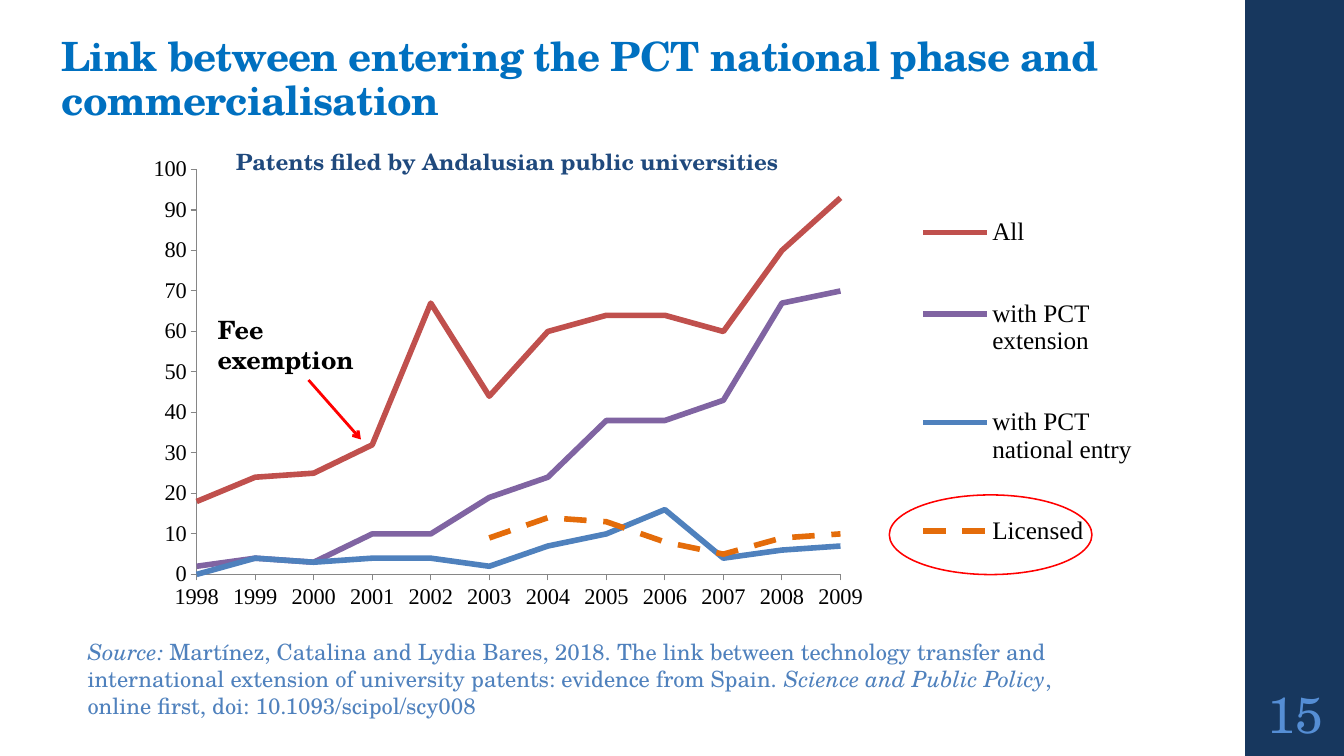
from lxml import etree
from pptx import Presentation
from pptx.chart.data import CategoryChartData
from pptx.dml.color import RGBColor
from pptx.enum.chart import XL_CHART_TYPE, XL_LEGEND_POSITION, XL_TICK_MARK
from pptx.enum.dml import MSO_LINE
from pptx.enum.shapes import MSO_CONNECTOR, MSO_SHAPE
from pptx.enum.text import MSO_ANCHOR, PP_ALIGN
from pptx.oxml.ns import qn
from pptx.util import Inches, Pt

LINE_CHART = XL_CHART_TYPE.LINE
RIGHT = XL_LEGEND_POSITION.RIGHT
OUTSIDE, NO_TICK = XL_TICK_MARK.OUTSIDE, XL_TICK_MARK.NONE
DASH = MSO_LINE.DASH
LEFT, CENTER = PP_ALIGN.LEFT, PP_ALIGN.CENTER
MIDDLE, TOP, BOTTOM = MSO_ANCHOR.MIDDLE, MSO_ANCHOR.TOP, MSO_ANCHOR.BOTTOM

SERIF, CHART_FONT = "TeX Gyre Schola", "Times New Roman"

TITLE = "Link between entering the PCT national phase and commercialisation"
CHART_HEADING = "Patents filed by Andalusian public universities"
CALLOUT = "Fee exemption"
PAGE_NUMBER = "15"
SOURCE = [  # text, italic
    ("Source: ", True),
    ("Martínez, Catalina and Lydia Bares, 2018. The link between technology transfer and "
     "international extension of university patents: evidence from Spain. ", False),
    ("Science and Public Policy", True),
    (", online first, doi: 10.1093/scipol/scy008", False),
]
YEARS = [str(year) for year in range(1998, 2010)]
PATENTS = [  # name, colour, dash, values
    ("All", "C0504D", None, [18, 24, 25, 32, 67, 44, 60, 64, 64, 60, 80, 93]),
    ("with PCT extension", "8064A2", None, [2, 4, 3, 10, 10, 19, 24, 38, 38, 43, 67, 70]),
    ("with PCT national entry", "4F81BD", None, [0, 4, 3, 4, 4, 2, 7, 10, 16, 4, 6, 7]),
    ("Licensed", "E46C0A", DASH, [None] * 5 + [9, 14, 13, 8, 5, 9, 10]),
]
PLOT_AREA = (0.07, 0.05, 0.62, 0.83)
LEGEND_AREA = (0.75, 0.04, 0.24, 0.89)


def color(hex_value):
    return RGBColor.from_string(hex_value)


def style(font, size, hex_value, name=SERIF, bold=False):
    font.name, font.size, font.bold = name, Pt(size), bold
    font.color.rgb = color(hex_value)


def add_text(box, runs, size, hex_value, bold=False, align=LEFT, anchor=TOP):
    """Add a wrapped one-paragraph text box; runs are (text, italic) pairs."""
    frame = slide.shapes.add_textbox(*map(Inches, box)).text_frame
    frame.word_wrap = True
    frame.vertical_anchor = anchor
    paragraph = frame.paragraphs[0]
    paragraph.alignment = align
    style(paragraph.font, size, hex_value, bold=bold)
    for text, italic in runs:
        run = paragraph.add_run()
        run.text = text
        if italic:
            run.font.italic = True
    return frame


def manual_layout(area, inner=False):
    """Build a c:layout element from chart fractions (x, y, w, h)."""
    layout = etree.Element(qn("c:layout"))
    manual = etree.SubElement(layout, qn("c:manualLayout"))
    settings = [("layoutTarget", "inner")] if inner else []
    settings += [("xMode", "edge"), ("yMode", "edge")]
    settings += zip("xywh", map(str, area))
    for tag, value in settings:
        etree.SubElement(manual, qn("c:" + tag)).set("val", value)
    return layout


def add_patent_chart():
    data = CategoryChartData()
    data.categories = YEARS
    for name, _, _, values in PATENTS:
        data.add_series(name, values)
    box = map(Inches, (1.23, 1.44, 10.3, 4.84))
    chart = slide.shapes.add_chart(LINE_CHART, *box, data).chart
    style(chart.font, 10, "000000")
    chart.has_title = False

    plot = chart.plots[0]
    plot.vary_by_categories = False
    for series, (_, hex_value, dash, _) in zip(plot.series, PATENTS):
        series.smooth = False
        series.format.line.width = Pt(4)
        series.format.line.color.rgb = color(hex_value)
        if dash:
            series.format.line.dash_style = dash

    values_axis = chart.value_axis
    values_axis.minimum_scale, values_axis.maximum_scale = 0, 100
    values_axis.major_unit = 10
    for axis in (chart.category_axis, values_axis):
        axis.has_major_gridlines = False
        axis.major_tick_mark, axis.minor_tick_mark = OUTSIDE, NO_TICK
        axis.format.line.color.rgb = color("868686")
        axis.format.line.width = Pt(0.75)
        style(axis.tick_labels.font, 16, "000000", CHART_FONT)

    chart.has_legend = True
    legend = chart.legend
    legend.position = RIGHT
    legend.include_in_layout = False
    style(legend.font, 18, "000000", CHART_FONT)

    # Lines start on the value axis; plot and legend have fixed places.
    root = plot._element.getparent()
    cross_between = etree.Element(qn("c:crossBetween"))
    cross_between.set("val", "midCat")
    root.find(qn("c:valAx")).find(qn("c:majorUnit")).addprevious(cross_between)
    for parent, position, layout in (
        (root, 0, manual_layout(PLOT_AREA, inner=True)),
        (legend._element, 1, manual_layout(LEGEND_AREA)),
    ):
        for old in parent.findall(qn("c:layout")):
            parent.remove(old)
        parent.insert(position, layout)


prs = Presentation()
prs.slide_width, prs.slide_height = Inches(13.33), Inches(7.5)
slide = prs.slides.add_slide(prs.slide_layouts[5])

side_band = slide.shapes.add_shape(MSO_SHAPE.RECTANGLE, *map(Inches, (12.35, 0, 0.98, 7.5)))
side_band.shadow.inherit = False
side_band.fill.solid()
side_band.fill.fore_color.rgb = color("17375E")
side_band.line.fill.background()

title = slide.shapes.title
title.left, title.top, title.width, title.height = map(Inches, (0.51, 0.32, 11.96, 0.96))
title.text_frame.text = TITLE
title.text_frame.vertical_anchor = BOTTOM
heading = title.text_frame.paragraphs[0]
heading.alignment, heading.line_spacing = LEFT, 0.9
style(heading.font, 28.8, "0070C0", bold=True)
heading.runs[0].font._element.set("spc", "-50")

page_frame = add_text((12.35, 6.75, 1, 0.65), [(PAGE_NUMBER, False)], 36, "558ED5",
                      align=CENTER, anchor=MIDDLE)
page_frame.margin_left = page_frame.margin_right = Inches(0.05)
page_frame.margin_top = page_frame.margin_bottom = Inches(0.05)

add_patent_chart()

licensed_ring = slide.shapes.add_shape(MSO_SHAPE.OVAL, *map(Inches, (8.82, 4.91, 2.01, 0.79)))
licensed_ring.shadow.inherit = False
licensed_ring.fill.background()
licensed_ring.line.color.rgb = color("FF0000")
licensed_ring.line.width = Pt(1.1)

add_text((0.77, 6.28, 10.41, 0.91), SOURCE, 16, "4F81BD")
add_text((2.24, 1.42, 6.31, 0.37), [(CHART_HEADING, False)], 16, "1F497D", bold=True)

fee_arrow = slide.shapes.add_connector(
    MSO_CONNECTOR.STRAIGHT, *map(Inches, (3.06, 3.77, 3.58, 4.36)))
fee_arrow.line.color.rgb = color("FF0000")
fee_arrow.line.width = Pt(2)
etree.SubElement(fee_arrow.line._get_or_add_ln(), qn("a:tailEnd")).set("type", "arrow")
etree.SubElement(fee_arrow._element.spPr, qn("a:effectLst"))
add_text((2.06, 3.07, 1.59, 0.71), [(CALLOUT, False)], 18, "000000", bold=True)

prs.save("out.pptx")
